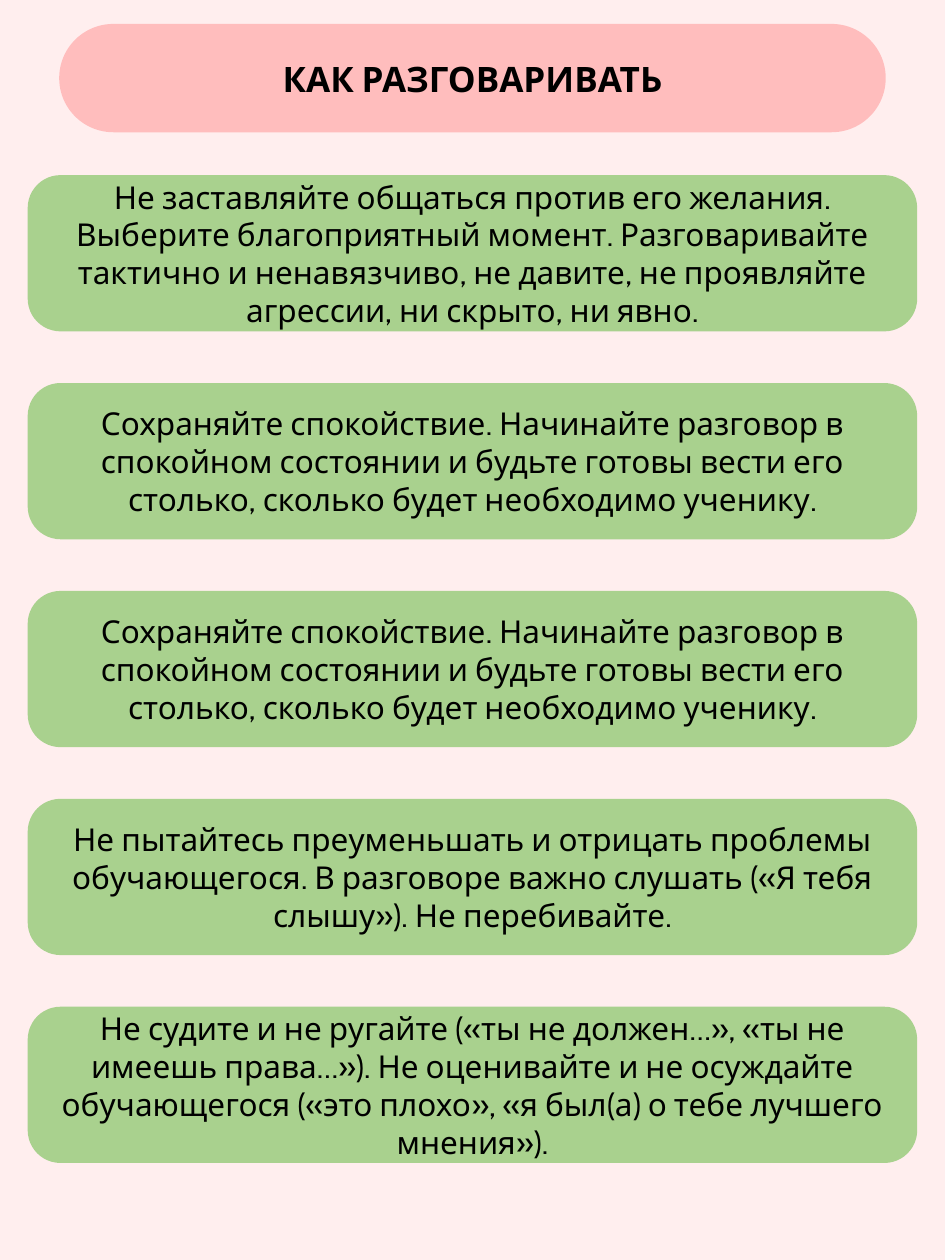
from pptx import Presentation
from pptx.dml.color import RGBColor
from pptx.enum.shapes import MSO_SHAPE
from pptx.enum.text import MSO_ANCHOR, MSO_AUTO_SIZE, PP_ALIGN
from pptx.util import Inches, Pt

COLORS = {"background": "FFEEEE", "header": "FFBDBD", "card": "A9D18E", "text": "000000"}
FONT = "Cabin"
CARD_TOP, CARD_STEP = 1.39, 1.65
CALM = ("Сохраняйте спокойствие. Начинайте разговор в спокойном состоянии и будьте "
        "готовы вести его столько, сколько будет необходимо ученику.")
TIPS = [
    "Не заставляйте общаться против его желания. Выберите благоприятный момент. "
    "Разговаривайте тактично и ненавязчиво, не давите, не проявляйте агрессии, "
    "ни скрыто, ни явно.",
    CALM,
    CALM,
    "Не пытайтесь преуменьшать и отрицать проблемы обучающегося. В разговоре важно "
    "слушать («Я тебя слышу»). Не перебивайте.",
    "Не судите и не ругайте («ты не должен…», «ты не имеешь права…»). Не оценивайте "
    "и не осуждайте обучающегося («это плохо», «я был(а) о тебе лучшего мнения»).",
]


def rgb(name):
    return RGBColor.from_string(COLORS[name])


class Poster:
    """Holds the text style and the current slide."""

    def __init__(self, slide):
        self.s = slide
        self.frame = {"word_wrap": True, "auto_size": MSO_AUTO_SIZE.NONE,
                      "vertical_anchor": MSO_ANCHOR.MIDDLE}

    def background(self):
        fill = self.s.background.fill
        fill.solid()
        fill.fore_color.rgb = rgb("background")

    def add_text(self, sp, text, size, bold=False):
        tf = sp.text_frame
        for name, value in self.frame.items():
            setattr(tf, name, value)
        p = tf.paragraphs[0]
        p.alignment = PP_ALIGN.CENTER
        r = p.add_run()
        r.text = text
        for name, value in {"name": FONT, "size": Pt(size), "bold": bold}.items():
            setattr(r.font, name, value)
        r.font.color.rgb = rgb("text")

    def panel(self, box, color, rounding):
        sp = self.s.shapes.add_shape(MSO_SHAPE.ROUNDED_RECTANGLE, *map(Inches, box))
        sp.adjustments[0] = rounding
        sp.shadow.inherit = False
        sp.fill.solid()
        sp.fill.fore_color.rgb = rgb(color)
        sp.line.fill.background()
        return sp

    def title(self, text, box):
        """Put the title placeholder in front of a pill of the same size."""
        pill = self.panel(box, "header", 0.5)
        sp = self.s.shapes.title
        for name, value in zip(("left", "top", "width", "height"), box):
            setattr(sp, name, Inches(value))
        pill._element.addnext(sp._element)
        self.add_text(sp, text, 20, bold=True)

    def card(self, text, box):
        self.add_text(self.panel(box, "card", 0.21), text, 18)


def main():
    prs = Presentation()
    prs.slide_width, prs.slide_height = Inches(7.5), Inches(10)
    poster = Poster(prs.slides.add_slide(prs.slide_layouts[5]))
    poster.background()
    poster.title("КАК РАЗГОВАРИВАТЬ", (0.47, 0.19, 6.56, 0.86))
    for i, tip in enumerate(TIPS):
        poster.card(tip, (0.22, CARD_TOP + i * CARD_STEP, 7.06, 1.24))
    prs.save("out.pptx")


if __name__ == "__main__":
    main()
